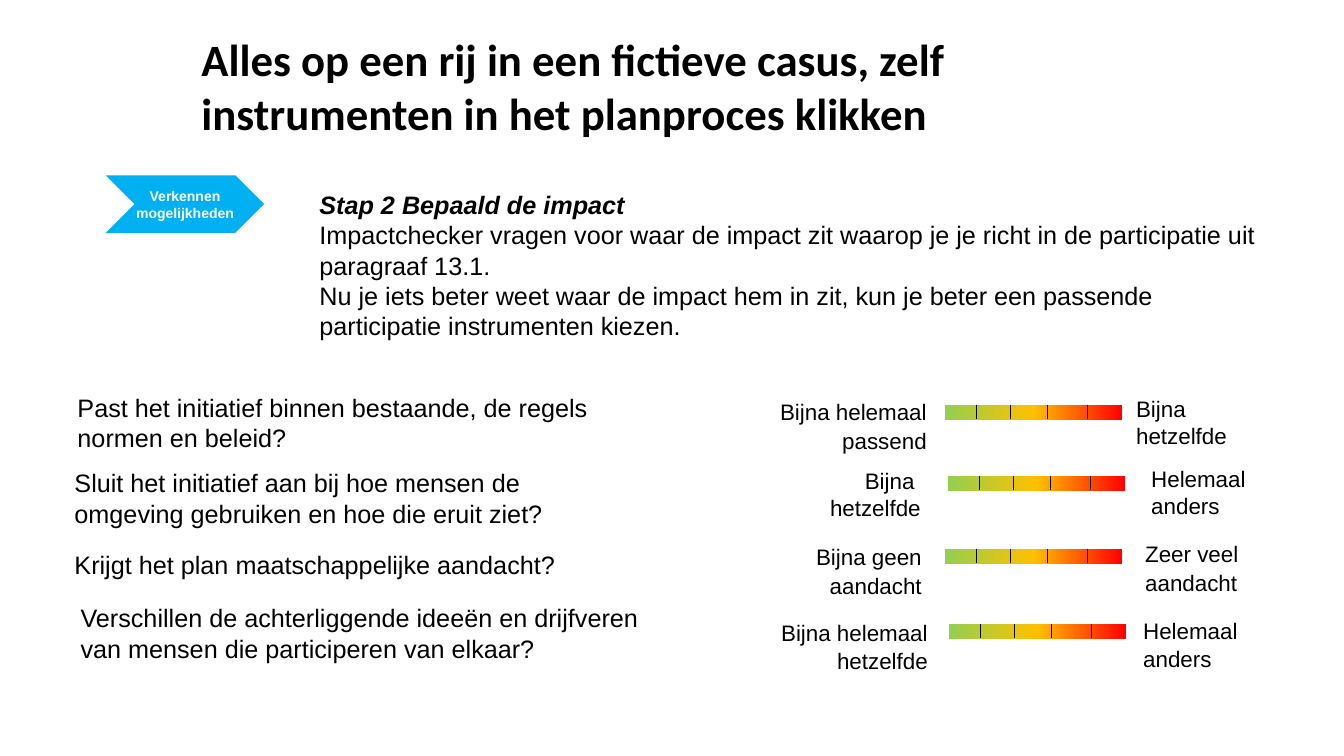
from copy import deepcopy
from dataclasses import dataclass

from lxml import etree
from pptx import Presentation
from pptx.dml.color import RGBColor
from pptx.enum import shapes, text
from pptx.oxml import ns
from pptx.util import Inches, Pt


@dataclass(frozen=True)
class Theme:
    black: RGBColor = RGBColor(0, 0, 0)
    white: RGBColor = RGBColor(255, 255, 255)
    blue: RGBColor = RGBColor(0x00, 0xB0, 0xF0)
    scale: tuple = (RGBColor(0xFF, 0, 0), RGBColor(0xFF, 0xC0, 0), RGBColor(0x92, 0xD0, 0x50))
    heading: str = "Calibri"
    body: str = "Arial"
    title_size: int = 32
    body_size: int = 18
    label_size: int = 16
    step_size: int = 10
    tick_width: float = 0.5


@dataclass(frozen=True)
class Block:
    left: float
    top: float
    width: float
    height: float
    wording: str
    loose: bool = True


@dataclass(frozen=True)
class Row:
    question: Block
    low: Block
    high: Block
    bar_left: float
    bar_top: float


THEME = Theme()
BAR_WIDTH, BAR_HEIGHT, TICK_HEIGHT = 1.76, 0.15, 0.14
TICKS = (0.31, 0.65, 1.02, 1.41)

TITLE = Block(1.9, 0.27, 9.53, 1.18,
              "Alles op een rij in een fictieve casus, zelf instrumenten in het planproces klikken")
STEP = Block(1.05, 1.74, 1.57, 0.57, "Verkennen mogelijkheden")
INTRO = Block(3.07, 1.82, 9.74, 1.62,
              "Stap 2 Bepaald de impact\n"
              "Impactchecker vragen voor waar de impact zit waarop je je richt in de "
              "participatie uit paragraaf 13.1.\n"
              "Nu je iets beter weet waar de impact hem in zit, kun je beter een passende "
              "participatie instrumenten kiezen.")
ROWS = (
    Row(Block(0.67, 3.84, 6.08, 0.7,
              "Past het initiatief binnen bestaande, de regels normen en beleid?"),
        Block(7.53, 3.88, 1.76, 0.45, "Bijna helemaal passend"),
        Block(11.17, 3.87, 1.33, 0.51, "Bijna\nhetzelfde", loose=False), 9.37, 4.02),
    Row(Block(0.64, 4.59, 5.18, 0.7,
              "Sluit het initiatief aan bij hoe mensen de omgeving gebruiken en hoe die eruit ziet?"),
        Block(8.09, 4.59, 1.14, 0.46, "Bijna \nhetzelfde", loose=False),
        Block(11.32, 4.57, 1.14, 0.46, "Helemaal anders", loose=False), 9.4, 4.72),
    Row(Block(0.64, 5.4, 6.08, 0.4, "Krijgt het plan maatschappelijke aandacht?"),
        Block(7.63, 5.32, 1.61, 0.46, "Bijna geen aandacht"),
        Block(11.26, 5.29, 1.36, 0.46, "Zeer veel aandacht"), 9.37, 5.45),
    Row(Block(0.7, 5.93, 6.05, 0.7,
              "Verschillen de achterliggende ideeën en drijfveren van mensen die participeren van elkaar?"),
        Block(7.63, 6.07, 1.67, 0.42, "Bijna helemaal hetzelfde"),
        Block(11.24, 6.05, 1.38, 0.46, "Helemaal anders"), 9.41, 6.19),
)


def box(block: Block) -> tuple:
    return tuple(Inches(v) for v in (block.left, block.top, block.width, block.height))


def write(tf, wording: str, size: int, font: str = THEME.body, color: RGBColor = THEME.black,
          bold: bool = False, align=text.PP_ALIGN.LEFT) -> None:
    tf.word_wrap = True
    tf.text = wording
    for p in tf.paragraphs:
        p.alignment = align
        for r in p.runs:
            r.font.size, r.font.name, r.font.bold = Pt(size), font, bold
            r.font.color.rgb = color


def add_text(parent, block: Block, size: int, **style):
    tf = parent.add_textbox(*box(block)).text_frame
    write(tf, block.wording, size, **style)
    return tf


def add_label(parent, block: Block, align) -> None:
    tf = add_text(parent, block, THEME.label_size, align=align)
    if block.loose:
        for p in tf.paragraphs:
            p.line_spacing, p.space_after = 1.07, Pt(8)


def add_step(parent, block: Block) -> None:
    sp = parent.add_shape(shapes.MSO_SHAPE.CHEVRON, *box(block))
    sp.shadow.inherit = False
    sp.fill.solid()
    sp.fill.fore_color.rgb = THEME.blue
    sp.line.fill.background()
    tf = sp.text_frame
    tf.margin_left = tf.margin_right = 0
    tf.margin_top = tf.margin_bottom = Inches(0.07)
    tf.vertical_anchor = text.MSO_ANCHOR.MIDDLE
    write(tf, block.wording, THEME.step_size, color=THEME.white, bold=True,
          align=text.PP_ALIGN.CENTER)


def add_bar(parent, left: float, top: float) -> None:
    sp = parent.add_shape(shapes.MSO_SHAPE.RECTANGLE, Inches(left), Inches(top),
                          Inches(BAR_WIDTH), Inches(BAR_HEIGHT))
    sp.shadow.inherit = False
    sp.line.fill.background()
    sp.fill.gradient()
    sp.fill.gradient_angle = 180
    # A third stop for the middle colour
    stops = sp._element.spPr.find(ns.qn("a:gradFill")).find(ns.qn("a:gsLst"))
    stops.append(deepcopy(stops[0]))
    for i, (stop, color) in enumerate(zip(sp.fill.gradient_stops, THEME.scale)):
        stop.position = i / 2
        stop.color.rgb = color
    for offset in TICKS:
        x = Inches(left + offset)
        tick = parent.add_connector(shapes.MSO_CONNECTOR.STRAIGHT, x, Inches(top),
                                    x, Inches(top + TICK_HEIGHT))
        tick.line.color.rgb = THEME.black
        tick.line.width = Pt(THEME.tick_width)
        etree.SubElement(tick._element.spPr, ns.qn("a:effectLst"))


def add_row(s, row: Row) -> None:
    add_text(s.shapes, row.question, THEME.body_size)
    scale = s.shapes.add_group_shape().shapes
    add_bar(scale, row.bar_left, row.bar_top)
    add_label(scale, row.low, text.PP_ALIGN.RIGHT)
    add_label(scale, row.high, text.PP_ALIGN.LEFT)


def main() -> None:
    prs = Presentation()
    prs.slide_width, prs.slide_height = Inches(13.33), Inches(7.5)
    s = prs.slides.add_slide(prs.slide_layouts[6])

    # Title and process step
    add_text(s.shapes, TITLE, THEME.title_size, font=THEME.heading, bold=True)
    add_step(s.shapes, STEP)

    # Introduction with its emphasised first line
    tf = add_text(s.shapes, INTRO, THEME.body_size)
    tf.vertical_anchor = text.MSO_ANCHOR.MIDDLE
    lead = tf.paragraphs[0].runs[0].font
    lead.bold = lead.italic = True

    # Questions with their impact scales
    for row in ROWS:
        add_row(s, row)

    prs.save("out.pptx")


if __name__ == "__main__":
    main()
